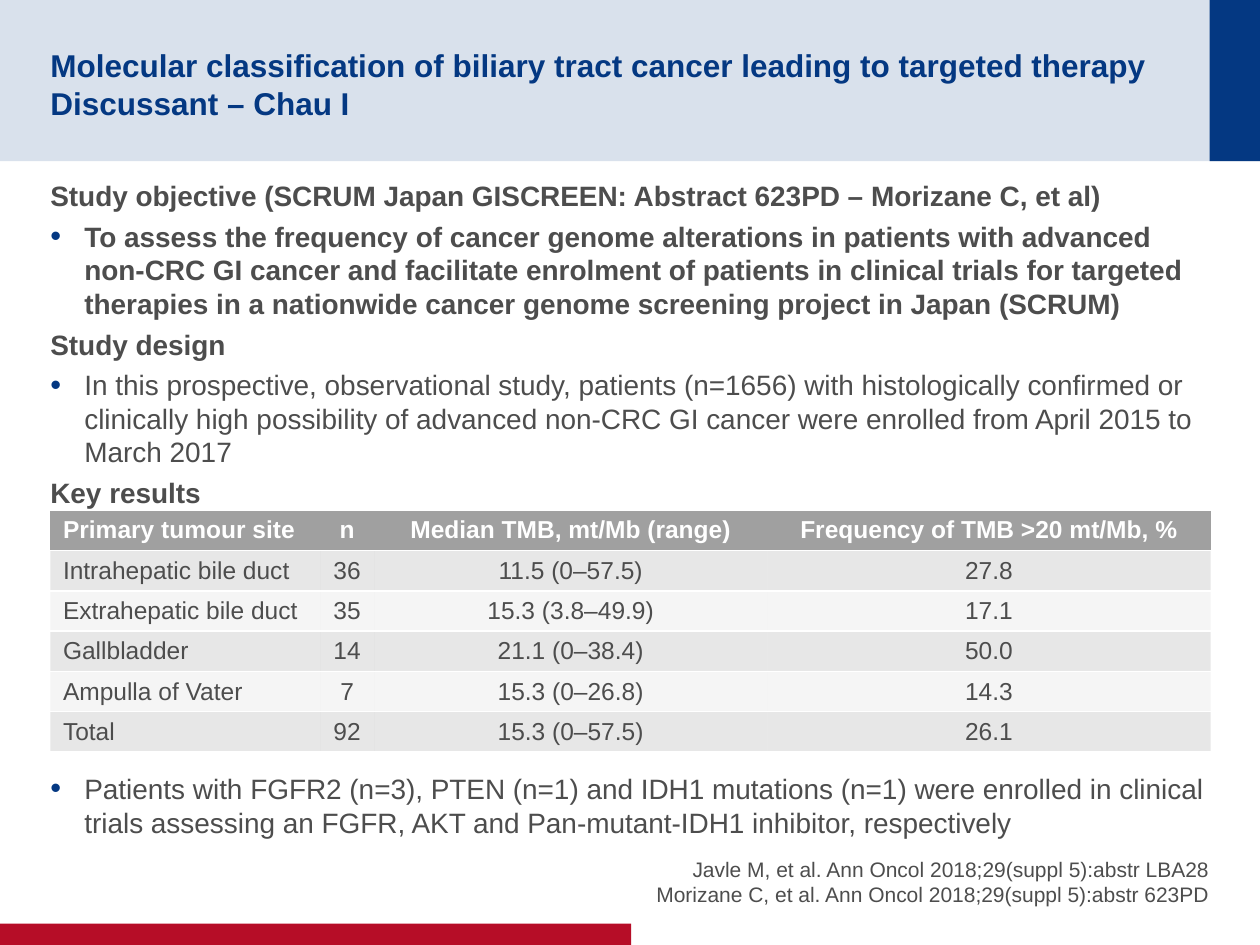
from lxml.etree import SubElement
from pptx import Presentation
from pptx.dml.color import RGBColor
from pptx.enum.shapes import MSO_SHAPE
from pptx.enum.text import MSO_ANCHOR, MSO_AUTO_SIZE, PP_ALIGN
from pptx.oxml import parse_xml
from pptx.oxml.ns import nsdecls, qn
from pptx.util import Inches, Pt

COLORS = {"navy": "043882", "red": "B60D27", "text": "4D4D4D",
          "grey": "A0A0A0", "white": "FFFFFF"}
NO_TABLE_STYLE = "{2D5ABB26-0587-4C30-8999-92F81FD0307C}"


def paint(fill, color, opacity=100):
    fill.solid()
    fill.fore_color.rgb = RGBColor.from_string(COLORS[color])
    if opacity < 100:
        alpha = SubElement(fill._xPr.find(".//" + qn("a:srgbClr")), qn("a:alpha"))
        alpha.set("val", str(opacity * 1000))


def style(paragraph, size, color="text", bold=False, align=PP_ALIGN.LEFT):
    paragraph.alignment = align
    font = paragraph.font
    font.name, font.size, font.bold = "Arial", Pt(size), bold
    font.color.rgb = RGBColor.from_string(COLORS[color])


prs = Presentation()
prs.slide_width, prs.slide_height = Inches(10), Inches(7.5)
slide = prs.slides.add_slide(prs.slide_layouts[5])

# Header band, corner block and footer bar
for left, top, width, height, color, opacity in [
    (0, 0, 10, 1.28, "navy", 15),
    (9.6, 0, 0.4, 1.28, "navy", 100),
    (0, 7.33, 5.01, 0.17, "red", 100),
]:
    bar = slide.shapes.add_shape(MSO_SHAPE.RECTANGLE, Inches(left), Inches(top),
                                 Inches(width), Inches(height))
    bar.shadow.inherit = False
    bar.line.fill.background()
    paint(bar.fill, color, opacity)

# Title, brought in front of the band
title = slide.shapes.title
slide.shapes._spTree.append(title._element)
title.left, title.top = Inches(0.4), Inches(0.2)
title.width, title.height = Inches(9.01), Inches(0.88)
heading = title.text_frame
heading.auto_size = MSO_AUTO_SIZE.NONE
heading.vertical_anchor = MSO_ANCHOR.MIDDLE
heading.margin_left = heading.margin_right = heading.margin_bottom = 0
heading.margin_top = Inches(0.05)
heading.paragraphs[0].text = (
    "Molecular classification of biliary tract cancer leading to targeted therapy\n"
    "Discussant – Chau I")
style(heading.paragraphs[0], 18, "navy", bold=True)

# Study summary: text, bullet, bold, space before (the last one clears the table)
summary = [
    ("Study objective (SCRUM Japan GISCREEN: Abstract 623PD – Morizane C, et al)",
     False, True, 0),
    ("To assess the frequency of cancer genome alterations in patients with advanced "
     "non-CRC GI cancer and facilitate enrolment of patients in clinical trials for "
     "targeted therapies in a nationwide cancer genome screening project in Japan "
     "(SCRUM)", True, True, 0),
    ("Study design", False, True, 0),
    ("In this prospective, observational study, patients (n=1656) with histologically "
     "confirmed or clinically high possibility of advanced non-CRC GI cancer were "
     "enrolled from April 2015 to March 2017", True, False, 0),
    ("Key results", False, True, 0),
    ("Patients with FGFR2 (n=3), PTEN (n=1) and IDH1 mutations (n=1) were enrolled in "
     "clinical trials assessing an FGFR, AKT and Pan-mutant-IDH1 inhibitor, "
     "respectively", True, False, 146),
]
body = slide.shapes.add_textbox(Inches(0.4), Inches(1.37), Inches(9.2),
                                Inches(5.19)).text_frame
body.word_wrap = True
body.margin_left = body.margin_right = 0
for i, (text, bullet, bold, space_before) in enumerate(summary):
    paragraph = body.add_paragraph() if i else body.paragraphs[0]
    paragraph.text = text
    style(paragraph, 16, bold=bold)
    paragraph.space_before, paragraph.space_after = Pt(space_before), Pt(4)
    if bullet:
        pPr = paragraph._p.get_or_add_pPr()
        pPr.set("marL", str(Inches(0.27)))
        pPr.set("indent", str(-Inches(0.27)))
        marks = [
            f'<a:buClr {nsdecls("a")}><a:srgbClr val="{COLORS["navy"]}"/></a:buClr>',
            f'<a:buSzPct {nsdecls("a")} val="110000"/>',
            f'<a:buFont {nsdecls("a")} typeface="Arial"/>',
            f'<a:buChar {nsdecls("a")} char="•"/>',
        ]
        for mark in marks:
            pPr.find(qn("a:defRPr")).addprevious(parse_xml(mark))

# References
references = slide.shapes.add_textbox(Inches(5.08), Inches(6.67), Inches(4.52),
                                      Inches(0.53)).text_frame
references.word_wrap = True
references.vertical_anchor = MSO_ANCHOR.BOTTOM
references.margin_left = references.margin_right = 0
references.margin_top = references.margin_bottom = 0
references.paragraphs[0].text = (
    "Javle M, et al. Ann Oncol 2018;29(suppl 5):abstr LBA28\n"
    "Morizane C, et al. Ann Oncol 2018;29(suppl 5):abstr 623PD")
style(references.paragraphs[0], 12, align=PP_ALIGN.RIGHT)

# Tumour mutational burden by primary site
results = [
    ("Primary tumour site", "n", "Median TMB, mt/Mb (range)",
     "Frequency of TMB >20 mt/Mb, %"),
    ("Intrahepatic bile duct", "36", "11.5 (0–57.5)", "27.8"),
    ("Extrahepatic bile duct", "35", "15.3 (3.8–49.9)", "17.1"),
    ("Gallbladder", "14", "21.1 (0–38.4)", "50.0"),
    ("Ampulla of Vater", "7", "15.3 (0–26.8)", "14.3"),
    ("Total", "92", "15.3 (0–57.5)", "26.1"),
]
column_widths = [2.14, 0.43, 3.12, 3.52]
row_height = 0.32
frame = slide.shapes.add_table(
    len(results), len(column_widths), Inches(0.4), Inches(4.05),
    Inches(sum(column_widths)), Inches(row_height * len(results)))
table = frame.table
table._tbl.tblPr.find(qn("a:tableStyleId")).text = NO_TABLE_STYLE
for column, width in zip(table.columns, column_widths):
    column.width = Inches(width)
for r, values in enumerate(results):
    table.rows[r].height = Inches(row_height)
    header = r == 0
    opacity = 100 if header else 25 if r % 2 else 10
    for c, value in enumerate(values):
        cell = table.cell(r, c)
        cell.vertical_anchor = MSO_ANCHOR.MIDDLE
        cell.margin_top = cell.margin_bottom = Inches(0.04)
        paragraph = cell.text_frame.paragraphs[0]
        paragraph.text = value
        style(paragraph, 14, "white" if header else "text", header,
              PP_ALIGN.CENTER if c else PP_ALIGN.LEFT)
        paint(cell.fill, "grey", opacity)
        for i, side in enumerate(("lnT", "lnB")):
            cell._tc.tcPr.insert(i, parse_xml(
                f'<a:{side} {nsdecls("a")} w="{Pt(1)}"><a:solidFill>'
                f'<a:srgbClr val="{COLORS["white"]}"/></a:solidFill></a:{side}>'))

prs.save("out.pptx")
